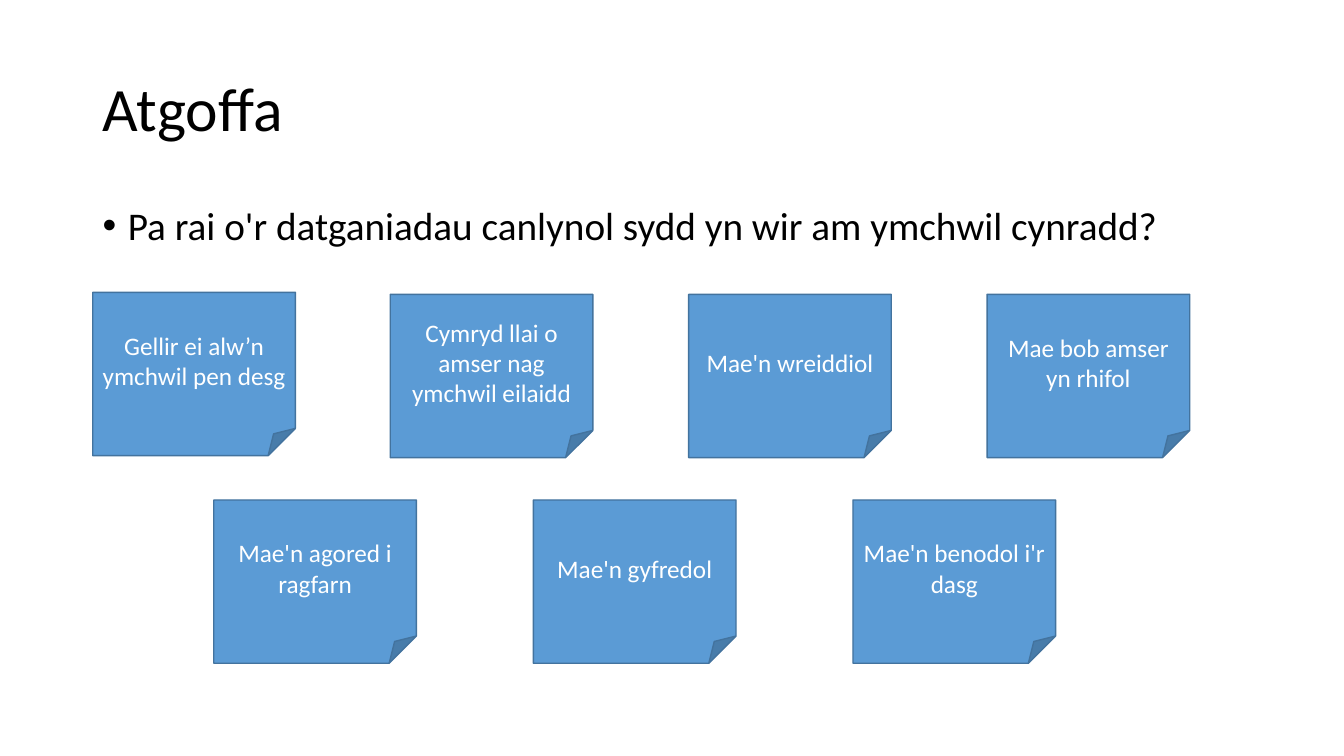
from dataclasses import dataclass

import pptx
import pptx.dml.color
import pptx.enum.shapes
import pptx.enum.text
import pptx.oxml.ns
import pptx.slide
import pptx.text.text
import pptx.util
from lxml import etree

Inches = pptx.util.Inches
Pt = pptx.util.Pt
RGBColor = pptx.dml.color.RGBColor
Anchor = pptx.enum.text.MSO_ANCHOR

BLACK = RGBColor(0x00, 0x00, 0x00)
WHITE = RGBColor(0xFF, 0xFF, 0xFF)
NOTE_BLUE = RGBColor(0x5B, 0x9B, 0xD5)
NOTE_EDGE = RGBColor(0x43, 0x73, 0x9E)
FONT = "Calibri"
NOTE_WIDTH, NOTE_HEIGHT = 2.01, 1.62


@dataclass
class Heading:
    text: str
    top: float
    height: float
    size: int
    anchor: Anchor
    bulleted: bool = False


@dataclass
class NoteRow:
    left: float
    top: float
    pitch: float
    texts: list[str]


HEADINGS = [
    Heading("Atgoffa", 0.38, 1.45, 44, Anchor.MIDDLE),
    Heading("Pa rai o'r datganiadau canlynol sydd yn wir am ymchwil cynradd?",
            2.0, 0.68, 28, Anchor.TOP, bulleted=True),
]

# The first note sits slightly higher than its neighbours
NOTE_ROWS = [
    NoteRow(0.92, 2.90, 2.96, ["Gellir ei alw’n ymchwil pen desg"]),
    NoteRow(3.87, 2.92, 2.96, ["Cymryd llai o amser nag ymchwil eilaidd",
                               "Mae'n wreiddiol",
                               "Mae bob amser yn rhifol"]),
    NoteRow(2.12, 4.96, 3.17, ["Mae'n agored i ragfarn",
                               "Mae'n gyfredol",
                               "Mae'n benodol i'r dasg"]),
]


def style_text(para: pptx.text.text._Paragraph, size: int, color: RGBColor) -> None:
    for span in para.runs:
        span.font.name = FONT
        span.font.size = Pt(size)
        span.font.color.rgb = color


def add_bullet(para: pptx.text.text._Paragraph) -> None:
    properties = para._p.get_or_add_pPr()
    properties.set("marL", str(Inches(0.25)))
    properties.set("indent", str(Inches(-0.25)))
    qn = pptx.oxml.ns.qn
    etree.SubElement(properties, qn("a:buFont")).set("typeface", "Arial")
    etree.SubElement(properties, qn("a:buChar")).set("char", "•")


def add_heading(page: pptx.slide.Slide, heading: Heading) -> None:
    box = page.shapes.add_textbox(Inches(0.92), Inches(heading.top),
                                  Inches(11.5), Inches(heading.height))
    frame = box.text_frame
    frame.word_wrap = True
    frame.vertical_anchor = heading.anchor
    frame.text = heading.text
    para = frame.paragraphs[0]
    if heading.bulleted:
        add_bullet(para)
    para.line_spacing = 0.9
    style_text(para, heading.size, BLACK)


def add_note(page: pptx.slide.Slide, left: float, top: float, text: str) -> None:
    note = page.shapes.add_shape(
        pptx.enum.shapes.MSO_SHAPE.FOLDED_CORNER, Inches(left), Inches(top),
        Inches(NOTE_WIDTH), Inches(NOTE_HEIGHT))
    note.shadow.inherit = False
    note.fill.solid()
    note.fill.fore_color.rgb = NOTE_BLUE
    note.line.color.rgb = NOTE_EDGE
    note.line.width = Pt(1)
    frame = note.text_frame
    frame.word_wrap = True
    frame.vertical_anchor = Anchor.MIDDLE
    frame.text = text
    para = frame.paragraphs[0]
    para.alignment = pptx.enum.text.PP_ALIGN.CENTER
    style_text(para, 18, WHITE)


def main() -> None:
    deck = pptx.Presentation()
    deck.slide_width = Inches(13.33)
    deck.slide_height = Inches(7.5)
    page = deck.slides.add_slide(deck.slide_layouts[6])

    # Title and question
    for heading in HEADINGS:
        add_heading(page, heading)

    # Statement notes
    for row in NOTE_ROWS:
        for column, text in enumerate(row.texts):
            add_note(page, row.left + column * row.pitch, row.top, text)

    deck.save("out.pptx")


if __name__ == "__main__":
    main()
